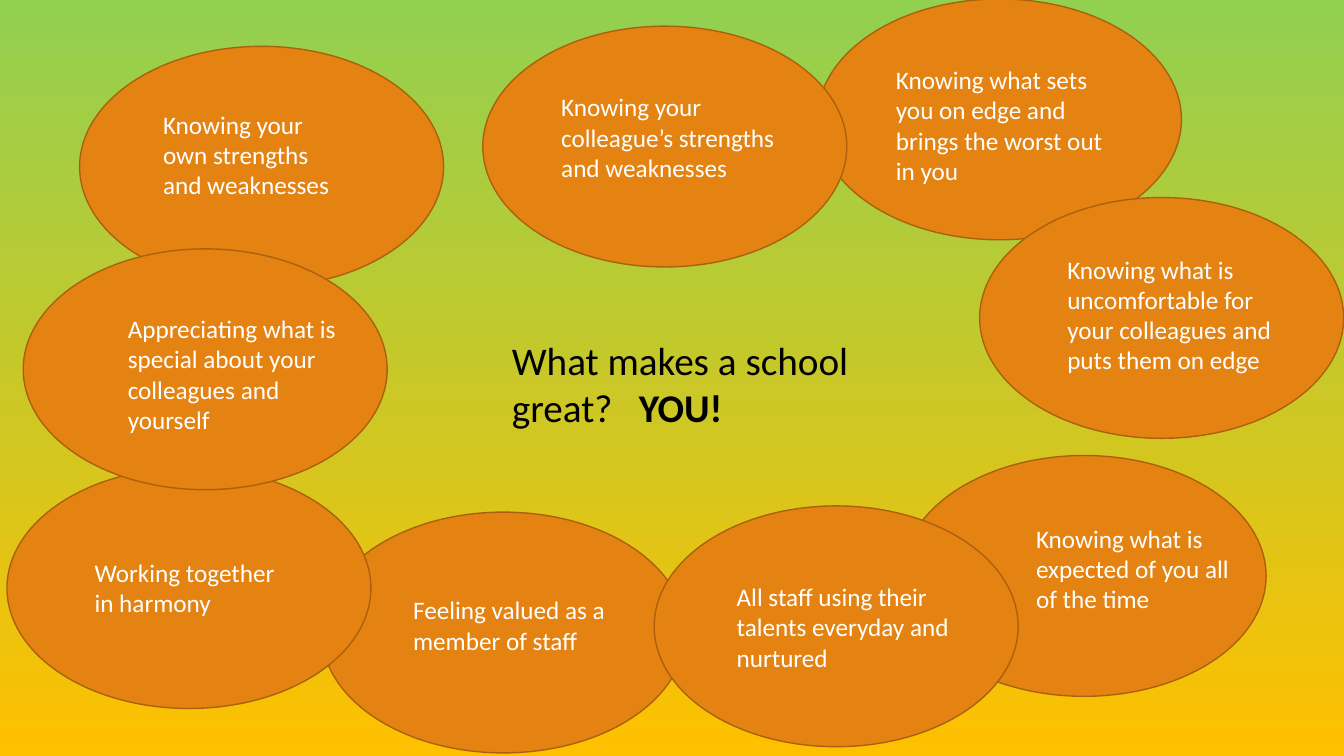
from dataclasses import dataclass

from lxml import etree
from pptx import Presentation
from pptx.dml.color import RGBColor
from pptx.enum import shapes, text
from pptx.oxml import ns
from pptx.util import Pt

HUES = {
    "top": "92D050",
    "base": "FFC000",
    "fill": "E48312",
    "edge": "A9610D",
    "dark": "000000",
    "light": "FFFFFF",
}
FONT = "Calibri"
OVAL_W, OVAL_H = 260, 172
LINE_H, PAD_H = 21.81, 7.27


@dataclass
class Bubble:
    left: float
    top: float
    text_left: float
    text_top: float
    text_width: float
    lines: int
    words: str


# Listed from back to front
BUBBLES = [
    Bubble(56.9, 33.1, 109.4, 74.2, 148.3, 3,
           "Knowing your own strengths and weaknesses"),
    Bubble(583.9, -0.7, 632.9, 42.5, 177.8, 4,
           "Knowing what sets you on edge and brings the worst out in you"),
    Bubble(699.8, 141.1, 755.3, 177.8, 177.8, 4,
           "Knowing what is uncomfortable for your colleagues and puts them on edge"),
    Bubble(344.9, 18.7, 393.8, 61.9, 169.2, 3,
           "Knowing your colleague’s strengths and weaknesses"),
    Bubble(644.4, 325.4, 733, 370.1, 160.6, 3,
           "Knowing what is expected of you all of the time"),
    Bubble(229.7, 365.8, 288, 421.2, 158.4, 2,
           "Feeling valued as a member of staff"),
    Bubble(5, 334.1, 60.5, 394.6, 146.9, 2,
           "Working together in harmony"),
    Bubble(16.6, 177.8, 84.2, 220.3, 173.5, 4,
           "Appreciating what is special about your colleagues and yourself"),
    Bubble(467.3, 361.4, 519.1, 411.8, 172.1, 3,
           "All staff using their talents everyday and nurtured"),
]


def hue(name: str) -> RGBColor:
    return RGBColor.from_string(HUES[name])


def paint_back(slide) -> None:
    fill = slide.background.fill
    fill.gradient()
    fill.gradient_angle = 270
    for stop, name in zip(fill.gradient_stops, ("top", "base")):
        stop.color.rgb = hue(name)


def add_oval(slide, item: Bubble) -> None:
    oval = slide.shapes.add_shape(shapes.MSO_SHAPE.OVAL, Pt(item.left),
                                  Pt(item.top), Pt(OVAL_W), Pt(OVAL_H))
    oval.shadow.inherit = False
    oval.fill.solid()
    oval.fill.fore_color.rgb = hue("fill")
    oval.line.color.rgb = hue("edge")
    oval.line.width = Pt(1)


def add_box(slide, left: float, top: float, width: float, height: float):
    box = slide.shapes.add_textbox(Pt(left), Pt(top), Pt(width), Pt(height))
    frame = box.text_frame
    frame.word_wrap = True
    frame.auto_size = text.MSO_AUTO_SIZE.SHAPE_TO_FIT_TEXT
    return frame.paragraphs[0]


def add_run(para, words: str, size: int, color: str, bold: bool = False) -> None:
    run = para.add_run()
    run.text = words
    run.font.name = FONT
    run.font.size = Pt(size)
    run.font.bold = bold
    run.font.color.rgb = hue(color)


def add_tab(para, pos: float) -> None:
    tabs = etree.SubElement(para._p.get_or_add_pPr(), ns.qn("a:tabLst"))
    etree.SubElement(tabs, ns.qn("a:tab"), pos=str(Pt(pos)), algn="l")


def main() -> None:
    deck = Presentation()
    deck.slide_width, deck.slide_height = Pt(960), Pt(540)
    slide = deck.slides.add_slide(deck.slide_layouts[6])
    paint_back(slide)

    # Ovals first, so that no oval hides a text
    for item in BUBBLES:
        add_oval(slide, item)
    for item in BUBBLES:
        para = add_box(slide, item.text_left, item.text_top,
                       item.text_width, PAD_H + LINE_H * item.lines)
        add_run(para, item.words, 18, "light")

    # Question in the middle
    para = add_box(slide, 358.6, 236.9, 260, 75)
    add_tab(para, 90.6)
    add_run(para, "What makes a school great?\t", 28, "dark")
    add_run(para, "YOU!", 28, "dark", bold=True)

    deck.save("out.pptx")


if __name__ == "__main__":
    main()
